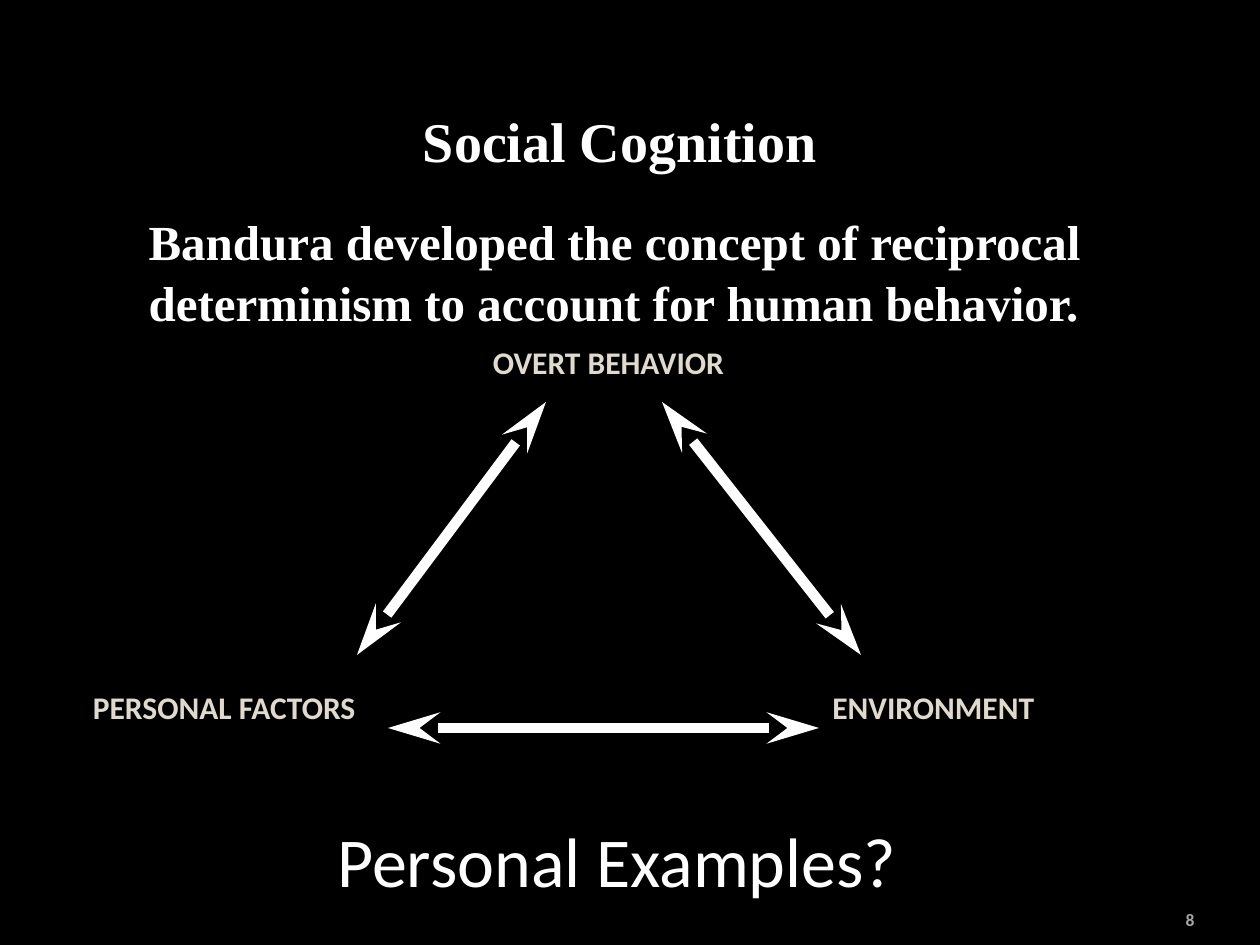
from dataclasses import dataclass

from lxml import etree
from pptx import Presentation
from pptx.dml.color import RGBColor
from pptx.enum import shapes, text
from pptx.oxml import ns
from pptx.util import Pt

PX = 914400 / 126


@dataclass(frozen=True)
class Theme:
    """Colours, fonts and type sizes of the slide."""

    black: str = "000000"
    white: str = "FFFFFF"
    sand: str = "E0DACC"
    grey: str = "A6A6A6"
    serif: str = "Times New Roman"
    sans: str = "Calibri"
    title: int = 32
    body: int = 28
    label: int = 18
    question: int = 40
    number: int = 10
    arrow: int = 6


THEME = Theme()
LEFT, CENTER, RIGHT = text.PP_ALIGN.LEFT, text.PP_ALIGN.CENTER, text.PP_ALIGN.RIGHT


def emu(px):
    """Turn px into EMU."""
    return round(px * PX)


def write(shape, box, words, size, font, color, align=LEFT, bold=True, spacing=1.0,
          anchor=text.MSO_ANCHOR.TOP):
    """Place a text shape in a box and fill it with one formatted paragraph."""
    shape.left, shape.top, shape.width, shape.height = map(emu, box)
    frame = shape.text_frame
    frame.word_wrap = True
    frame.auto_size = text.MSO_AUTO_SIZE.NONE
    frame.vertical_anchor = anchor
    para = frame.paragraphs[0]
    para.text = words
    para.alignment = align
    para.line_spacing = spacing
    para.space_before = Pt(0)
    para.font.size, para.font.name, para.font.bold = Pt(size), font, bold
    para.font.color.rgb = RGBColor.from_string(color)
    return para


def add_text(page, box, *args, **options):
    """Add a text box with one formatted paragraph."""
    return write(page.shapes.add_textbox(0, 0, 0, 0), box, *args, **options)


def add_heading(page, box):
    """Fill the title and body placeholders at the top of the slide."""
    left, top, width, height = box
    write(page.shapes.title, (left, top, width, 79), "Social Cognition",
          THEME.title, THEME.serif, THEME.white, CENTER, spacing=1.05)
    para = write(page.placeholders[1], (left + 20, top + 105, width, height - 105),
                 "Bandura developed the concept of reciprocal determinism "
                 "to account for human behavior.",
                 THEME.body, THEME.serif, THEME.white, spacing=1.05)
    properties = para._p.get_or_add_pPr()
    properties.set("marL", "0")
    properties.set("indent", "0")
    etree.SubElement(properties, ns.qn("a:buNone"))


def add_double_arrow(page, start, end):
    """Draw a thick line with a stealth arrowhead at each end."""
    arrow = page.shapes.add_connector(shapes.MSO_CONNECTOR.STRAIGHT,
                                      *map(emu, start + end))
    arrow.line.width = Pt(THEME.arrow)
    arrow.line.color.rgb = RGBColor.from_string(THEME.white)
    outline = arrow.line._get_or_add_ln()
    for tag in ("a:headEnd", "a:tailEnd"):
        etree.SubElement(outline, ns.qn(tag), type="stealth", w="med", len="lg")
    etree.SubElement(arrow._element.spPr, ns.qn("a:effectLst"))


def add_triangle(page, box):
    """Place the three factors and the arrows that join them."""
    left, top, width, height = box
    low = top + height - 72
    labels = (
        ("OVERT BEHAVIOR", (left + 398, top, 315, 72), CENTER),
        ("PERSONAL FACTORS", (left, low, 315, 72), RIGHT),
        ("ENVIRONMENT", (left + width - 409, low, 409, 72), LEFT),
    )
    for words, place, align in labels:
        add_text(page, place, words, THEME.label, THEME.sans, THEME.sand, align)
    upper, lower, base = top + 65, low - 27, low + 46
    arrows = (
        ((left + 304, lower), (left + 493, upper)),
        ((left + 609, upper), (left + 808, lower)),
        ((left + 335, base), (left + 766, base)),
    )
    for start, end in arrows:
        add_double_arrow(page, start, end)


def add_footer(page, box):
    """Place the closing question and the page number."""
    left, top, width, height = box
    add_text(page, (left, top, 651, 97), "Personal Examples?",
             THEME.question, THEME.sans, THEME.white, bold=False)
    add_text(page, (left + width - 121, top + height - 34, 121, 34), "8",
             THEME.number, THEME.sans, THEME.grey, RIGHT,
             anchor=text.MSO_ANCHOR.MIDDLE)


def main():
    """Build the slide and save it."""
    deck = Presentation()
    deck.slide_width, deck.slide_height = emu(1260), emu(945)
    page = deck.slides.add_slide(deck.slide_layouts[1])
    page.background.fill.solid()
    page.background.fill.fore_color.rgb = RGBColor.from_string(THEME.black)
    add_heading(page, (116, 97, 1008, 235))
    add_triangle(page, (53, 337, 1176, 417))
    add_footer(page, (325, 811, 882, 125))
    deck.save("out.pptx")


if __name__ == "__main__":
    main()
